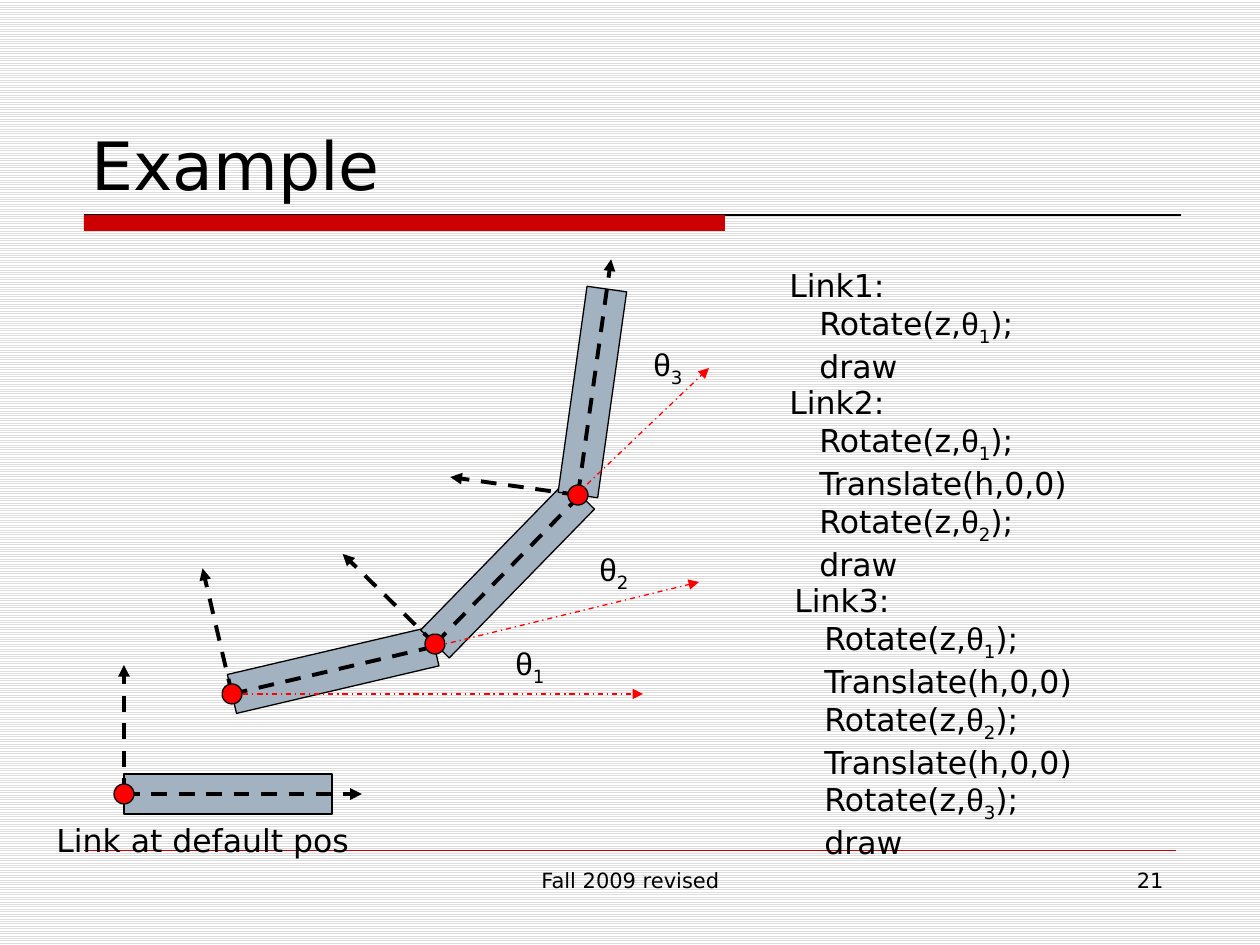
import math

from lxml import etree
from pptx import Presentation
from pptx.dml.color import RGBColor
from pptx.enum import dml, shapes, text
from pptx.oxml import ns
from pptx.util import Emu, Pt

SCALE = 914400 / 126  # EMU in one px
BLACK = RGBColor(0x00, 0x00, 0x00)
WHITE = RGBColor(0xFF, 0xFF, 0xFF)
STRIPE = RGBColor(0xDD, 0xDD, 0xDD)
CRIMSON = RGBColor(0xCC, 0x00, 0x00)
RED = RGBColor(0xFF, 0x00, 0x00)
STEEL = RGBColor(0xA3, 0xB2, 0xC1)

LINK_LENGTH, LINK_WIDTH, JOINT = 208, 40, 20
X_AXIS, Y_AXIS = 238, 129
INDENT = 30


def px(value):
    return Emu(round(value * SCALE))


def add_span(para, content, size=18, font="DejaVu Sans", subscript=False):
    span = para.add_run()
    span.text = content
    span.font.size = Pt(size)
    span.font.name = font
    span.font.color.rgb = BLACK
    if subscript:
        span._r.get_or_add_rPr().set("baseline", "-25000")


def fill_para(para, content, **style):
    """Write one line; the digit after each θ becomes a subscript."""
    head, *angles = content.split("θ")
    if head:
        add_span(para, head, **style)
    for angle in angles:
        add_span(para, "θ", **{**style, "font": "Arial"})
        add_span(para, angle[0], subscript=True, **style)
        if angle[1:]:
            add_span(para, angle[1:], **style)


class Slide:
    def __init__(self, deck):
        self.page = deck.slides.add_slide(deck.slide_layouts[6])

    def background(self, pattern, front, back):
        fill = self.page.background.fill
        fill.patterned()
        fill.pattern = pattern
        fill.fore_color.rgb = front
        fill.back_color.rgb = back

    def shape(self, kind, left, top, width, height, color, outline=BLACK, rotation=0):
        shape = self.page.shapes.add_shape(kind, px(left), px(top), px(width), px(height))
        shape.shadow.inherit = False
        shape.fill.solid()
        shape.fill.fore_color.rgb = color
        if outline is None:
            shape.line.fill.background()
        else:
            shape.line.color.rgb = outline
            shape.line.width = Pt(0.75)
        shape.rotation = rotation

    def line(self, start, end, color, width, dash=None, arrow=False):
        line = self.page.shapes.add_connector(
            shapes.MSO_CONNECTOR.STRAIGHT, *map(px, (*start, *end)))
        line.line.color.rgb = color
        line.line.width = Pt(width)
        if dash is not None:
            line.line.dash_style = dash
        if arrow:
            etree.SubElement(line.line._get_or_add_ln(), ns.qn("a:tailEnd"), type="triangle")
        etree.SubElement(line._element.spPr, ns.qn("a:effectLst"))

    def text(self, left, top, width, height, lines, align=text.PP_ALIGN.LEFT,
             anchor=text.MSO_ANCHOR.TOP, **style):
        """Place a text box; every line after the first is indented."""
        box = self.page.shapes.add_textbox(px(left), px(top), px(width), px(height))
        frame = box.text_frame
        frame.word_wrap = True
        frame.vertical_anchor = anchor
        for index, content in enumerate(lines):
            para = frame.add_paragraph() if index else frame.paragraphs[0]
            para.alignment = align
            if index:
                para._p.get_or_add_pPr().set("marL", str(px(INDENT)))
            fill_para(para, content, **style)

    def link(self, x, y, degrees):
        """Draw a link with its local axes, turned around its joint."""
        def along(length, angle):
            turn = math.radians(angle)
            return x + length * math.cos(turn), y - length * math.sin(turn)

        center_x, center_y = along(LINK_LENGTH / 2, degrees)
        self.shape(shapes.MSO_SHAPE.RECTANGLE, center_x - LINK_LENGTH / 2,
                   center_y - LINK_WIDTH / 2, LINK_LENGTH, LINK_WIDTH, STEEL,
                   rotation=-degrees)
        for length, angle in ((X_AXIS, degrees), (Y_AXIS, degrees + 90)):
            self.line((x, y), along(length, angle), BLACK, 2.25,
                      dml.MSO_LINE.DASH, arrow=True)
        self.shape(shapes.MSO_SHAPE.OVAL, x - JOINT / 2, y - JOINT / 2, JOINT, JOINT,
                   RED, rotation=-degrees)


def main():
    deck = Presentation()
    deck.slide_width, deck.slide_height = px(1260), px(945)
    slide = Slide(deck)
    slide.background(dml.MSO_PATTERN.LIGHT_HORIZONTAL, STRIPE, WHITE)

    # Rules, footer and title
    slide.line((84, 215), (1181, 215), BLACK, 0.75)
    slide.shape(shapes.MSO_SHAPE.RECTANGLE, 84, 215, 641, 16, CRIMSON, outline=None)
    slide.line((84, 850), (1176, 850), CRIMSON, 0.25)
    slide.text(431, 861, 399, 66, ["Fall 2009 revised"], text.PP_ALIGN.CENTER, size=12)
    slide.text(903, 861, 273, 66, ["21"], text.PP_ALIGN.RIGHT, size=12)
    slide.text(79, 42, 1103, 168, ["Example"], anchor=text.MSO_ANCHOR.BOTTOM, size=38)

    # Default link, then the chain of three
    for x, y, degrees in ((124, 794, 0), (232, 694, 13.2), (435, 644, 45.7), (578, 495, 82)):
        slide.link(x, y, degrees)

    # Reference directions and joint angles
    for start, end in (((229, 694), (643, 694)), ((437, 646), (699, 582)),
                       ((577, 494), (709, 368))):
        slide.line(start, end, RED, 0.75, dml.MSO_LINE.DASH_DOT, arrow=True)
    for left, top, label in ((503, 638, "θ1"), (587, 544, "θ2"), (641, 339, "θ3")):
        slide.text(left, top, 63, 63, [label])
    slide.text(44, 815, 368, 63, ["Link at default pos"])

    # Transform steps for each link
    move = "Translate(h,0,0)"
    turns = [f"Rotate(z,θ{number});" for number in (1, 2, 3)]
    steps = []
    for number, (left, top, width, height) in enumerate(
            ((777, 260, 301, 164), (777, 377, 364, 265), (782, 575, 364, 365)), 1):
        steps += [move, turns[number - 1]] if steps else [turns[0]]
        slide.text(left, top, width, height, [f"Link{number}:", *steps, "draw"])

    deck.save("out.pptx")


if __name__ == "__main__":
    main()
